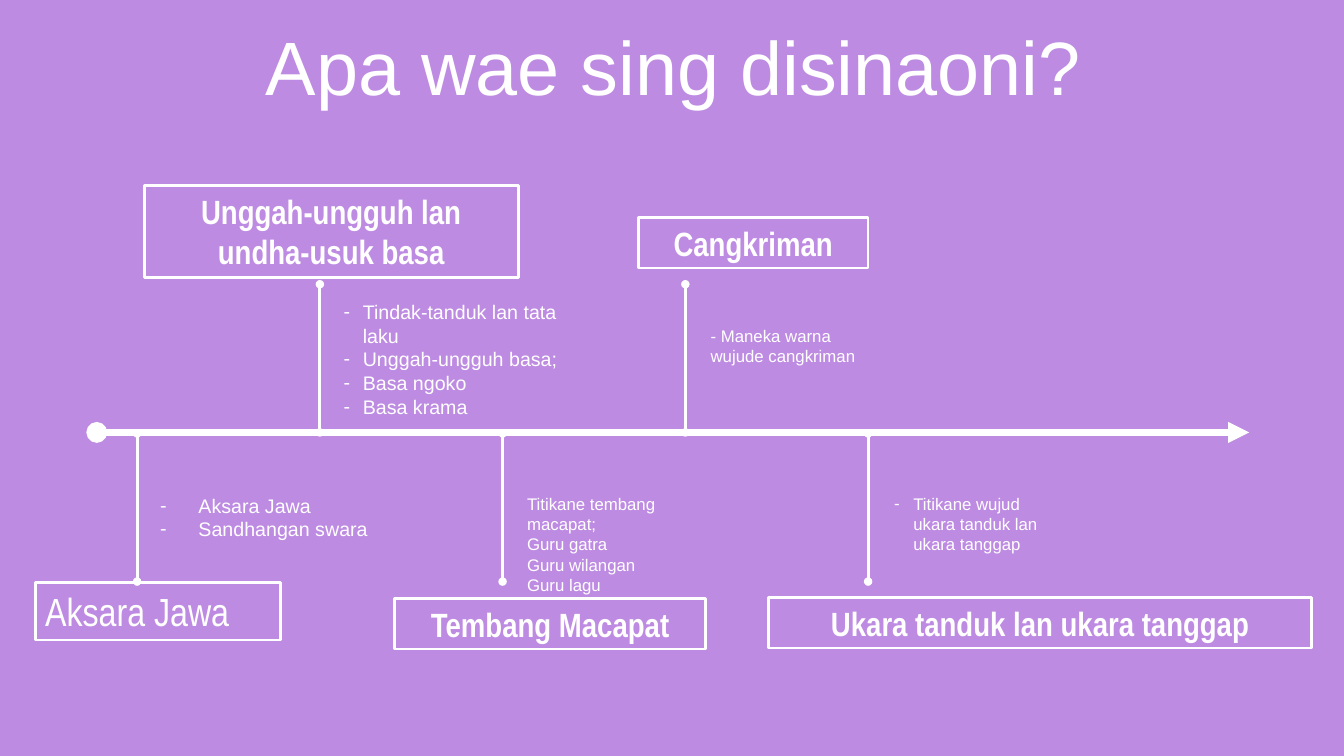
from lxml import etree
from pptx import Presentation
from pptx.dml.color import RGBColor
from pptx.enum.shapes import MSO_CONNECTOR as Connector, MSO_SHAPE as Shape
from pptx.enum.text import MSO_ANCHOR as Anchor, PP_ALIGN as Align
from pptx.oxml.ns import qn
from pptx.util import Inches, Pt

COLORS = {"background": "BE8BE2", "foreground": "FFFFFF"}
BODY_FONT, HEADING_FONT = "Arial", "Arial Narrow"

AXIS_Y, AXIS_START, AXIS_END = 4.29, 0.96, 12.39
FIRST_STEM, LAST_STEM = 1.36, 8.61
STEM_LENGTH = 1.47

# Topics in timeline order, alternately below and above the axis.
# heading: text, box, size, bold; details: lines, box, size, dash indent
TOPICS = [
    (("Aksara Jawa", (0.35, 5.78, 2.43, 0.57), 28, False),
     (["Aksara Jawa", "Sandhangan swara"], (1.49, 4.85, 2.36, 0.57), 14, 0.38)),
    (("Unggah-ungguh lan undha-usuk basa", (1.43, 1.84, 3.71, 0.91), 24, True),
     (["Tindak-tanduk lan tata laku", "Unggah-ungguh basa;", "Basa ngoko",
       "Basa krama"], (3.31, 2.93, 2.45, 1.28), 14, 0.19)),
    (("Tembang Macapat", (3.91, 5.94, 3.09, 0.5), 24, True),
     (["Titikane tembang macapat;", "Guru gatra", "Guru wilangan",
       "Guru lagu"], (5.13, 4.85, 1.84, 1.11), 12, 0)),
    (("Cangkriman", (6.33, 2.16, 2.28, 0.5), 24, True),
     (["- Maneka warna wujude cangkriman"], (6.95, 3.18, 1.84, 0.5), 12, 0)),
    (("Ukara tanduk lan ukara tanggap", (7.62, 5.93, 5.39, 0.5), 24, True),
     (["Titikane wujud ukara tanduk lan ukara tanggap"],
      (8.77, 4.85, 1.84, 0.71), 12, 0.19)),
]


class TimelineSlide:
    def __init__(self, deck):
        self.slide = deck.slides.add_slide(deck.slide_layouts[6])
        self.foreground = RGBColor.from_string(COLORS["foreground"])
        fill = self.slide.background.fill
        fill.solid()
        fill.fore_color.rgb = RGBColor.from_string(COLORS["background"])

    def style(self, paragraph, size, font_name, bold=False):
        for run in paragraph.runs:
            run.font.size = Pt(size)
            run.font.name = font_name
            run.font.bold = bold
            run.font.color.rgb = self.foreground

    def title(self, text, box):
        title = self.slide.shapes.add_textbox(*map(Inches, box))
        frame = title.text_frame
        frame.word_wrap = True
        frame.vertical_anchor = Anchor.MIDDLE
        frame.text = text
        paragraph = frame.paragraphs[0]
        paragraph.alignment = Align.CENTER
        paragraph.line_spacing = 0.9
        paragraph.space_before = Pt(10)
        self.style(paragraph, 54, BODY_FONT)

    def line(self, start, end, width, head="oval"):
        line = self.slide.shapes.add_connector(
            Connector.STRAIGHT, *map(Inches, (*start, *end)))
        line.line.color.rgb = self.foreground
        line.line.width = Pt(width)
        outline = line.line._get_or_add_ln()
        etree.SubElement(outline, qn("a:headEnd"), type=head)
        etree.SubElement(outline, qn("a:tailEnd"), type="oval")
        etree.SubElement(line._element.spPr, qn("a:effectLst"))

    def heading(self, text, box, size, bold):
        heading = self.slide.shapes.add_shape(Shape.RECTANGLE, *map(Inches, box))
        heading.shadow.inherit = False
        heading.fill.background()
        heading.line.color.rgb = self.foreground
        heading.line.width = Pt(2)
        frame = heading.text_frame
        frame.word_wrap = True
        frame.vertical_anchor = Anchor.MIDDLE
        frame.text = text
        paragraph = frame.paragraphs[0]
        paragraph.alignment = Align.CENTER if bold else Align.LEFT
        self.style(paragraph, size, HEADING_FONT, bold)

    def details(self, lines, box, size, indent):
        details = self.slide.shapes.add_textbox(*map(Inches, box))
        frame = details.text_frame
        frame.word_wrap = True
        frame.text = "\n".join(lines)
        for paragraph in frame.paragraphs:
            self.style(paragraph, size, BODY_FONT)
            if indent:
                self.dash(paragraph, indent)

    def dash(self, paragraph, indent):
        """Give the paragraph a hanging dash bullet."""
        properties = paragraph._p.get_or_add_pPr()
        properties.set("marL", str(Inches(indent)))
        properties.set("indent", str(-Inches(indent)))
        etree.SubElement(properties, qn("a:buFont"), typeface=BODY_FONT)
        etree.SubElement(properties, qn("a:buChar"), char="-")


def main():
    deck = Presentation()
    deck.slide_width, deck.slide_height = Inches(13.33), Inches(7.5)
    timeline = TimelineSlide(deck)
    timeline.title("Apa wae sing disinaoni?", (0.35, 0.31, 12.66, 0.79))
    timeline.line((AXIS_END, AXIS_Y), (AXIS_START, AXIS_Y), 5, head="triangle")

    stem_gap = (LAST_STEM - FIRST_STEM) / (len(TOPICS) - 1)
    for index, (heading, details) in enumerate(TOPICS):
        x = FIRST_STEM + index * stem_gap
        top = AXIS_Y - STEM_LENGTH if index % 2 else AXIS_Y + 0.01
        timeline.line((x, top), (x, top + STEM_LENGTH), 2)
        timeline.heading(*heading)
        timeline.details(*details)
    deck.save("out.pptx")


if __name__ == "__main__":
    main()
